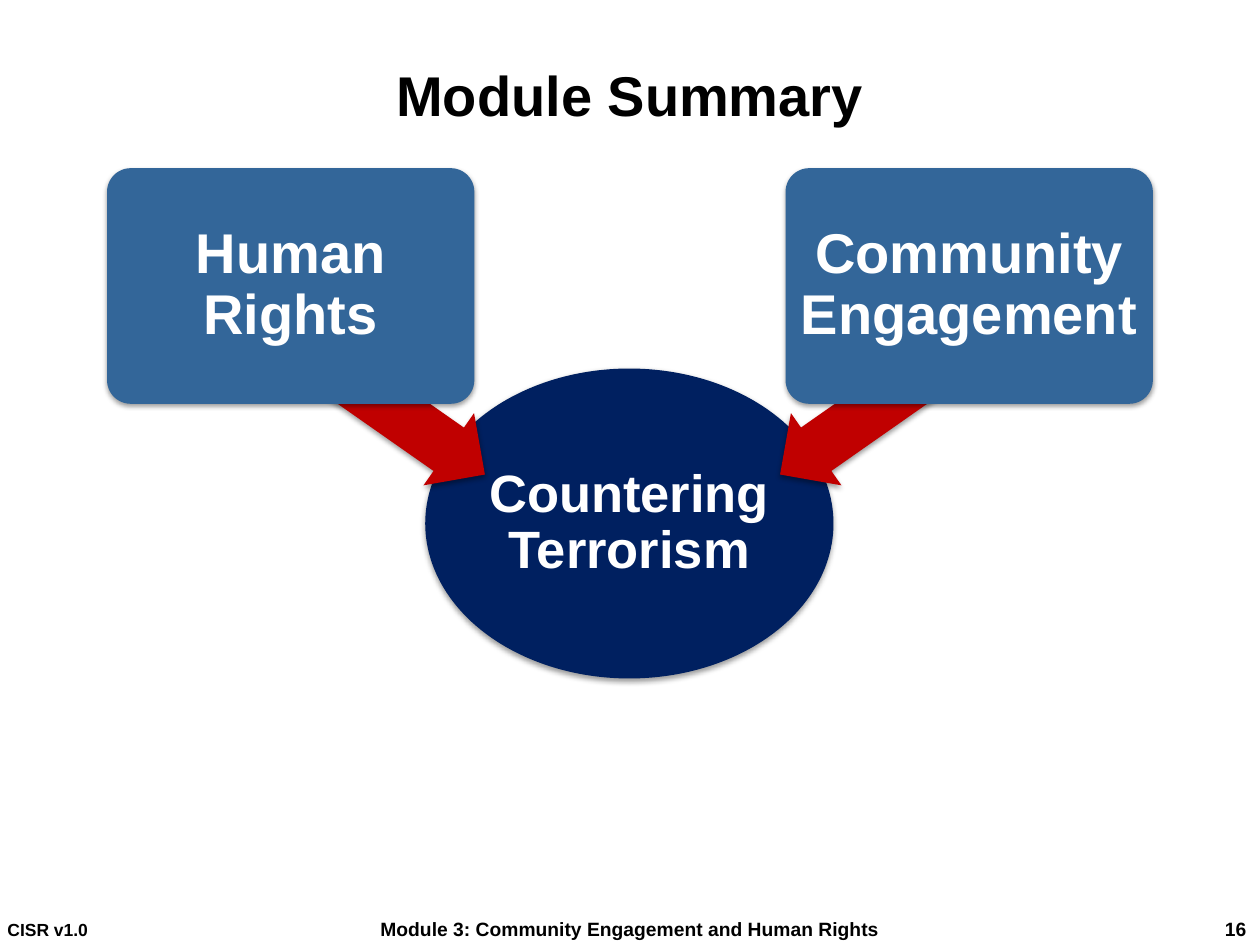
import dataclasses

import lxml.etree
import pptx
import pptx.dml.color
import pptx.enum.shapes
import pptx.enum.text
import pptx.oxml.ns
import pptx.util

RGB = pptx.dml.color.RGBColor
KIND = pptx.enum.shapes.MSO_SHAPE
ALIGN = pptx.enum.text.PP_ALIGN

BLACK = RGB(0x00, 0x00, 0x00)
WHITE = RGB(0xFF, 0xFF, 0xFF)
NAVY = RGB(0x00, 0x20, 0x60)
BLUE = RGB(0x33, 0x66, 0x99)
RED = RGB(0xC0, 0x00, 0x00)

WIDE, HIGH = pptx.util.Inches(10), pptx.util.Inches(7.5)
COLS, ROWS = 100, 75


@dataclasses.dataclass(frozen=True)
class Area:
    """A place on the slide, in columns and rows of the grid."""
    col: float
    row: float
    cols: float
    rows: float

    def flip(self, shift: float = 0) -> "Area":
        """Mirror the area about the slide's centre line, then shift it right."""
        return dataclasses.replace(self, col=COLS - self.col - self.cols + shift)

    def spans(self) -> list[int]:
        return [round(WIDE * self.col / COLS), round(HIGH * self.row / ROWS),
                round(WIDE * self.cols / COLS), round(HIGH * self.rows / ROWS)]


@dataclasses.dataclass(frozen=True)
class Label:
    text: str
    area: Area
    size: float
    align: ALIGN
    side: float = 0.01


@dataclasses.dataclass(frozen=True)
class Form:
    kind: KIND
    area: Area
    fill: RGB
    adjust: tuple[float, ...] = ()
    turn: float = 0
    text: str = ""
    size: float = 32
    inset: float = 0.05


LABELS = [
    Label("Module Summary", Area(4.5, 2.5, 91, 10), 32, ALIGN.CENTER),
    Label("Module 3: Community Engagement and Human Rights",
          Area(27.5, 72.5, 45, 2.5), 11, ALIGN.CENTER, 0.1),
    Label("CISR v1.0", Area(0.5, 72.5, 26, 2.5), 10, ALIGN.LEFT),
    Label("16", Area(95.5, 72.5, 4.4, 2.5), 11, ALIGN.RIGHT, 0.1),
]

GOAL = Form(KIND.OVAL, Area(33.75, 29.25, 32.4, 24.6), NAVY,
            text="Countering Terrorism", size=30, inset=0.02)
ARROW = Form(KIND.LEFT_ARROW, Area(22.75, 29.2, 17.3, 7), RED, (0.6, 0.5), turn=215)
BOX = Form(KIND.ROUNDED_RECTANGLE, Area(8.5, 13.35, 29.15, 18.7), BLUE, (0.1,),
           text="Human Rights")
FORMS = [
    GOAL,
    ARROW,
    BOX,
    dataclasses.replace(ARROW, area=ARROW.area.flip(0.4), turn=540 - ARROW.turn),
    dataclasses.replace(BOX, area=BOX.area.flip(), text="Community Engagement"),
]


def write(frame, text: str, *, size: float, color: RGB, align: ALIGN,
          side: float, edge: float, line: float = 1) -> None:
    """Put one bold paragraph in a frame; side and edge are insets in inches."""
    frame.word_wrap = True
    frame.vertical_anchor = pptx.enum.text.MSO_ANCHOR.MIDDLE
    frame.margin_left = frame.margin_right = pptx.util.Inches(side)
    frame.margin_top = frame.margin_bottom = pptx.util.Inches(edge)
    para = frame.paragraphs[0]
    para.alignment = align
    para.line_spacing = line
    run = para.add_run()
    run.text = text
    run.font.name = "Arial"
    run.font.size = pptx.util.Pt(size)
    run.font.bold = True
    run.font.color.rgb = color


def add_shade(shape) -> None:
    """Give the shape a soft shadow that falls straight down."""
    shape.shadow.inherit = False
    tag = pptx.oxml.ns.qn
    effects = shape._element.spPr.find(tag("a:effectLst"))
    shade = lxml.etree.SubElement(
        effects, tag("a:outerShdw"), blurRad=str(pptx.util.Pt(3.1)),
        dist=str(pptx.util.Pt(1.6)), dir=str(90 * 60000), rotWithShape="0")
    color = lxml.etree.SubElement(shade, tag("a:srgbClr"), val=str(BLACK))
    lxml.etree.SubElement(color, tag("a:alpha"), val="38000")


def draw_form(slide, form: Form) -> None:
    shape = slide.shapes.add_shape(form.kind, *form.area.spans())
    for index, value in enumerate(form.adjust):
        shape.adjustments[index] = value
    shape.rotation = form.turn
    shape.fill.solid()
    shape.fill.fore_color.rgb = form.fill
    shape.line.fill.background()
    add_shade(shape)
    if form.text:
        write(shape.text_frame, form.text, size=form.size, color=WHITE,
              align=ALIGN.CENTER, side=form.inset, edge=form.inset, line=0.9)


def draw_label(slide, label: Label) -> None:
    box = slide.shapes.add_textbox(*label.area.spans())
    write(box.text_frame, label.text, size=label.size, color=BLACK,
          align=label.align, side=label.side, edge=0.01)


def main() -> None:
    deck = pptx.Presentation()
    deck.slide_width, deck.slide_height = WIDE, HIGH
    slide = deck.slides.add_slide(deck.slide_layouts[6])
    for label in LABELS:
        draw_label(slide, label)
    for form in FORMS:
        draw_form(slide, form)
    deck.save("out.pptx")


if __name__ == "__main__":
    main()
